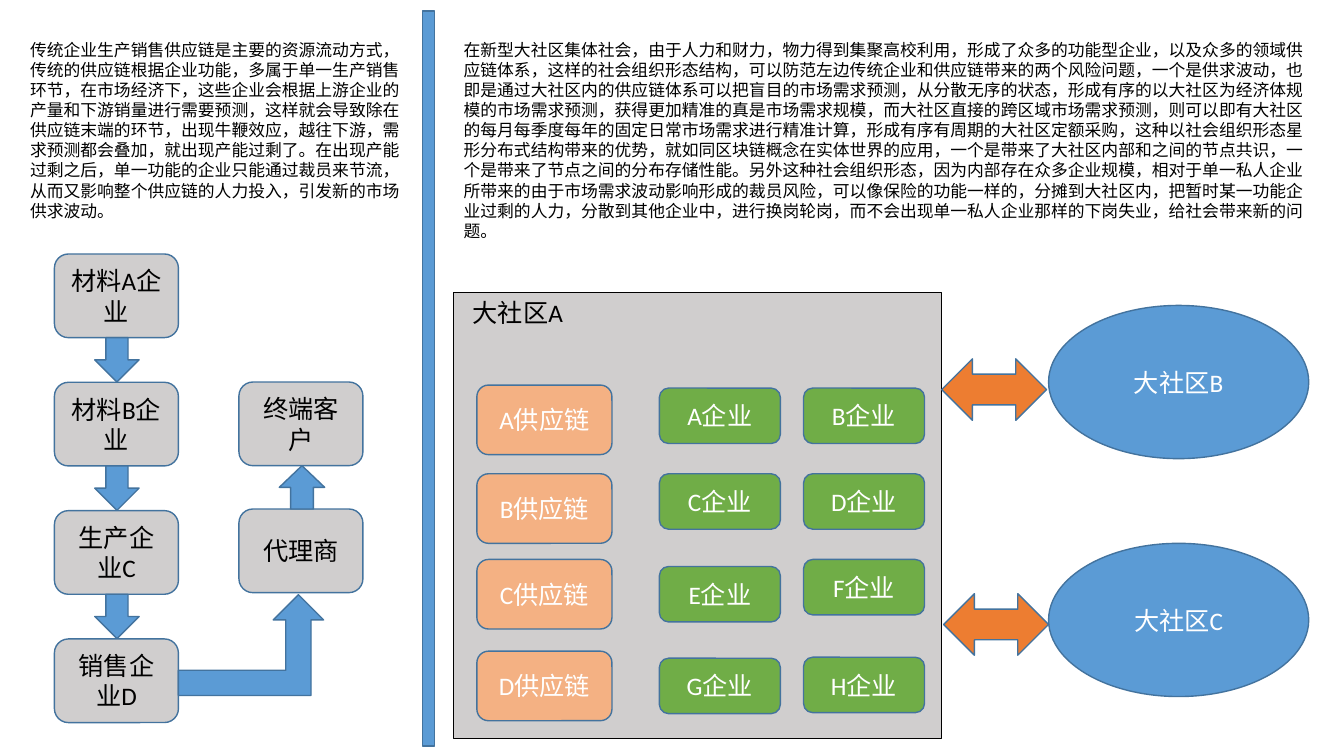
from pptx import Presentation, util as u
from pptx.dml import color
from pptx.enum import shapes, text

COLUMNS, ROWS = 13.33, 7.5
BLUE, GRAY, PEACH, GREEN, ORANGE = "5B9BD5", "D0CECE", "F4B183", "70AD47", "ED7D31"
OUTLINE, BLACK, WHITE = "43739E", "000000", "FFFFFF"
KIND = shapes.MSO_SHAPE

presentation = Presentation()
presentation.slide_width = u.Inches(COLUMNS)
presentation.slide_height = u.Inches(ROWS)
column = presentation.slide_width / COLUMNS
row = presentation.slide_height / ROWS
slide = presentation.slides.add_slide(presentation.slide_layouts[6])


def paint(target, value):
    target.rgb = color.RGBColor.from_string(value)


def add_item(kind, left, top, width, height, fill=None, words="", ink=BLACK, size=18, outline=OUTLINE):
    box = [round(left * column), round(top * row), round(width * column), round(height * row)]
    if kind is None:
        shape = slide.shapes.add_textbox(*box)
    else:
        shape = slide.shapes.add_shape(kind, *box)
        shape.shadow.inherit = False
        shape.fill.solid()
        paint(shape.fill.fore_color, fill)
        paint(shape.line.color, outline)
        shape.line.width = u.Pt(1)
    if words:
        frame = shape.text_frame
        frame.word_wrap = True
        frame.text = words
        paragraph = frame.paragraphs[0]
        if kind is not None:
            frame.vertical_anchor = text.MSO_ANCHOR.MIDDLE
            paragraph.alignment = text.PP_ALIGN.CENTER
        font = paragraph.runs[0].font
        font.name = "Calibri"
        font.size = u.Pt(size)
        paint(font.color, ink)


chain_left, chain_top, chain_step = 0.54, 2.52, 1.273
for index, name in enumerate(["材料A企业", "材料B企业", "生产企业C", "销售企业D"]):
    top = chain_top + index * chain_step
    add_item(KIND.ROUNDED_RECTANGLE, chain_left, top, 1.23, 0.83, GRAY, name)
    if index < 3:
        add_item(KIND.DOWN_ARROW, 0.94, top + 0.83, 0.44, 0.44, BLUE)

for name, top in [("代理商", 5.05), ("终端客户", 3.79)]:
    add_item(KIND.ROUNDED_RECTANGLE, 2.37, top, 1.23, 0.83, GRAY, name)
add_item(KIND.BENT_UP_ARROW, 1.77, 5.9, 1.44, 1, BLUE)
add_item(KIND.UP_ARROW, 2.77, 4.62, 0.45, 0.43, BLUE)

add_item(KIND.RECTANGLE, 4.19, 0.11, 0.12, 7.29, BLUE)

traditional_text = (
    "传统企业生产销售供应链是主要的资源流动方式，传统的供应链根据企业功能，多属于单一生产销售环节，"
    "在市场经济下，这些企业会根据上游企业的产量和下游销量进行需要预测，这样就会导致除在供应链末端的环节，"
    "出现牛鞭效应，越往下游，需求预测都会叠加，就出现产能过剩了。在出现产能过剩之后，"
    "单一功能的企业只能通过裁员来节流，从而又影响整个供应链的人力投入，引发新的市场供求波动。"
)
community_text = (
    "在新型大社区集体社会，由于人力和财力，物力得到集聚高校利用，形成了众多的功能型企业，"
    "以及众多的领域供应链体系，这样的社会组织形态结构，可以防范左边传统企业和供应链带来的两个风险问题，"
    "一个是供求波动，也即是通过大社区内的供应链体系可以把盲目的市场需求预测，从分散无序的状态，"
    "形成有序的以大社区为经济体规模的市场需求预测，获得更加精准的真是市场需求规模，"
    "而大社区直接的跨区域市场需求预测，则可以即有大社区的每月每季度每年的固定日常市场需求进行精准计算，"
    "形成有序有周期的大社区定额采购，这种以社会组织形态星形分布式结构带来的优势，"
    "就如同区块链概念在实体世界的应用，一个是带来了大社区内部和之间的节点共识，"
    "一个是带来了节点之间的分布存储性能。另外这种社会组织形态，因为内部存在众多企业规模，"
    "相对于单一私人企业所带来的由于市场需求波动影响形成的裁员风险，可以像保险的功能一样的，"
    "分摊到大社区内，把暂时某一功能企业过剩的人力，分散到其他企业中，进行换岗轮岗，"
    "而不会出现单一私人企业那样的下岗失业，给社会带来新的问题。"
)
add_item(None, 0.2, 0.34, 3.91, 1.92, words=traditional_text, size=12)
add_item(None, 4.5, 0.34, 8.58, 2.12, words=community_text, size=12)

add_item(KIND.RECTANGLE, 4.5, 2.9, 4.84, 4.43, GRAY, outline=BLACK)
add_item(None, 4.59, 2.9, 1.18, 0.4, words="大社区A")

for letter, top in zip("ABCD", [3.82, 4.7, 5.55, 6.46]):
    add_item(KIND.ROUNDED_RECTANGLE, 4.73, top, 1.34, 0.69, PEACH, letter + "供应链", WHITE)

company_columns = [
    (6.54, "ACEG", [3.85, 4.7, 5.62, 6.53]),
    (7.97, "BDFH", [3.85, 4.7, 5.55, 6.52]),
]
for left, letters, tops in company_columns:
    for letter, top in zip(letters, tops):
        add_item(KIND.ROUNDED_RECTANGLE, left, top, 1.2, 0.55, GREEN, letter + "企业", WHITE)

for letter, top, arrow_left, arrow_top in [("B", 3.03, 9.34, 3.56), ("C", 5.39, 9.36, 5.89)]:
    add_item(KIND.OVAL, 10.4, top, 2.58, 1.52, BLUE, "大社区" + letter, WHITE)
    add_item(KIND.LEFT_RIGHT_ARROW, arrow_left, arrow_top, 1.04, 0.61, ORANGE)

presentation.save("out.pptx")
